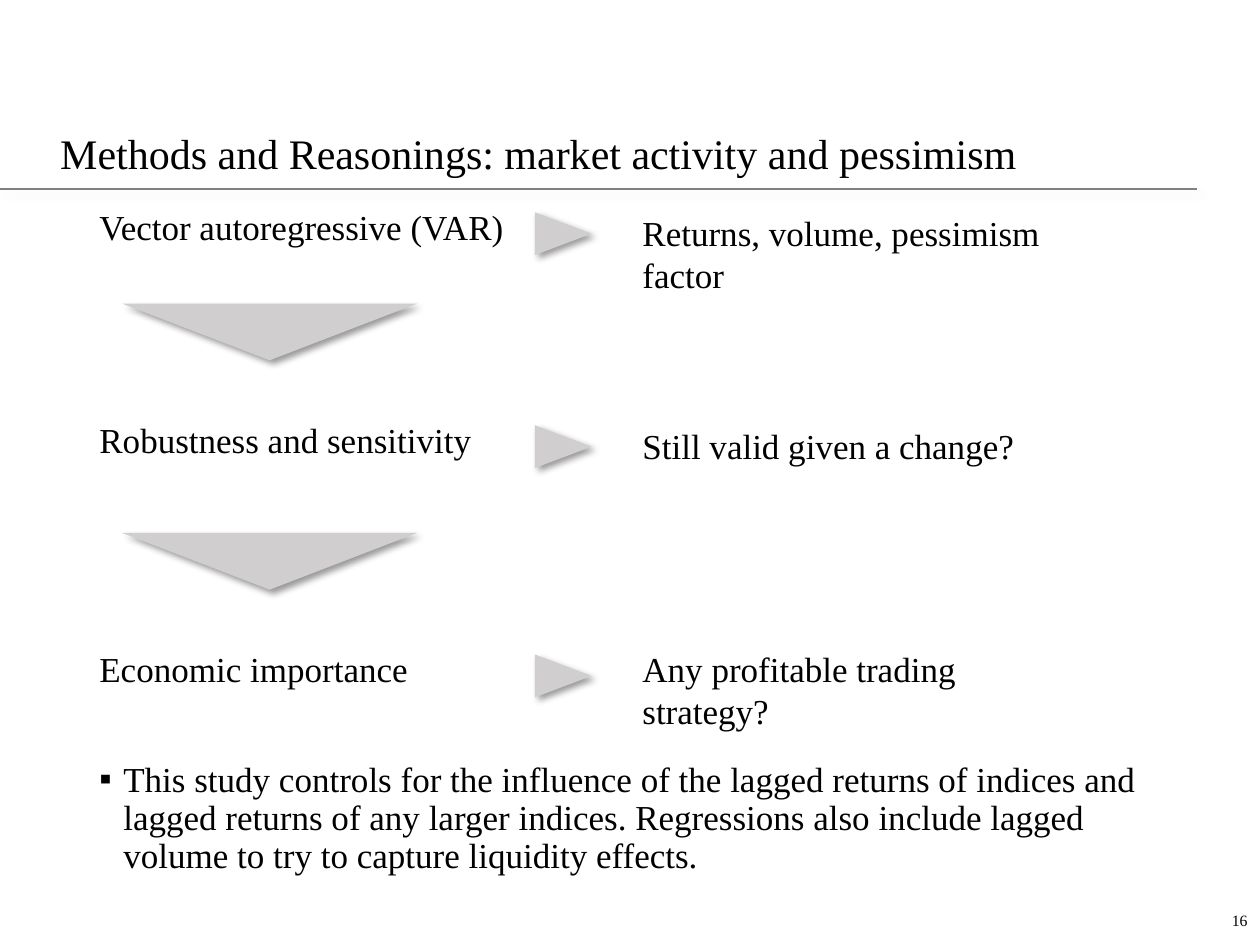
from dataclasses import dataclass

from lxml.etree import SubElement
from pptx import Presentation
from pptx.dml.color import RGBColor
from pptx.enum.shapes import MSO_CONNECTOR as Connector, MSO_SHAPE as Shape
from pptx.enum.text import MSO_ANCHOR as Anchor, PP_ALIGN as Align
from pptx.oxml.ns import qn
from pptx.util import Inches, Pt

COLORS = {"text": "000000", "arrow": "D0CECE", "rule": "808080", "shadow": "000000"}
FONT = "Times New Roman"
WIDTH, HEIGHT = 10, 7.5

# Grid, in inches: left edges of the columns and tops of the rows
STEP_COLUMN, DOWN_COLUMN, RIGHT_COLUMN, RESULT_COLUMN = 0.69, 0.97, 4.3, 5
ROWS = (1.58, 3.27, 5.09)
LABEL_WIDTH, LABEL_HEIGHT = 3.72, 0.44
ARROW_OFFSET, DOWN_LEAD = 0.05, 0.86
BULLET_INDENT = 0.19


@dataclass(frozen=True)
class Box:
    left: float
    top: float
    width: float
    height: float

    def emu(self) -> tuple:
        return tuple(Inches(n) for n in (self.left, self.top, self.width, self.height))


@dataclass(frozen=True)
class Step:
    method: str
    result: str
    result_offset: float
    result_height: float = LABEL_HEIGHT


STEPS = (
    Step("Vector autoregressive (VAR)", "Returns, volume, pessimism factor", 0.05, 0.77),
    Step("Robustness and sensitivity", "Still valid given a change?", 0.05),
    Step("Economic importance", "Any profitable trading strategy?", 0),
)
CONTROLS = (
    "This study controls for the influence of the lagged returns of indices and "
    "lagged returns of any larger indices. Regressions also include lagged volume "
    "to try to capture liquidity effects."
)


def color(name: str) -> RGBColor:
    return RGBColor.from_string(COLORS[name])


def add_shadow(shape) -> None:
    """Soft shadow falling to the lower right, whatever the shape's rotation."""
    effects = SubElement(shape._element.spPr, qn("a:effectLst"))
    shadow = SubElement(
        effects, qn("a:outerShdw"), blurRad=str(Pt(4)), dist=str(Pt(3)),
        dir=str(45 * 60000), algn="tl", rotWithShape="0",
    )
    tint = SubElement(shadow, qn("a:srgbClr"), val=COLORS["shadow"])
    SubElement(tint, qn("a:alpha"), val="40000")


def add_text(slide, box: Box, text: str, size: float = 20, anchor=Anchor.TOP,
             align=Align.LEFT, spacing: float = 1.0, bullet: str = "") -> None:
    frame = slide.shapes.add_textbox(*box.emu()).text_frame
    frame.word_wrap = True
    frame.vertical_anchor = anchor
    paragraph = frame.paragraphs[0]
    paragraph.alignment = align
    paragraph.line_spacing = spacing
    if bullet:
        properties = paragraph._p.get_or_add_pPr()
        properties.set("marL", str(Inches(BULLET_INDENT)))
        properties.set("indent", str(-Inches(BULLET_INDENT)))
        SubElement(properties, qn("a:buFont"), typeface=FONT)
        SubElement(properties, qn("a:buChar"), char=bullet)
    run = paragraph.add_run()
    run.text = text
    run.font.name = FONT
    run.font.size = Pt(size)
    run.font.color.rgb = color("text")


def add_arrow(slide, box: Box, rotation: int) -> None:
    arrow = slide.shapes.add_shape(Shape.ISOSCELES_TRIANGLE, *box.emu())
    arrow.rotation = rotation
    arrow.fill.solid()
    arrow.fill.fore_color.rgb = color("arrow")
    arrow.line.fill.background()
    add_shadow(arrow)


def add_title_rule(slide) -> None:
    y = Inches(HEIGHT / 5)
    rule = slide.shapes.add_connector(
        Connector.STRAIGHT, 0, y, Inches(WIDTH * 0.95), y)
    rule.line.color.rgb = color("rule")
    rule.line.width = Pt(1)
    add_shadow(rule)


def add_step(slide, step: Step, top: float) -> None:
    add_text(slide, Box(STEP_COLUMN, top, LABEL_WIDTH, LABEL_HEIGHT), step.method)
    add_arrow(slide, Box(RIGHT_COLUMN, top + ARROW_OFFSET, 0.34, 0.45), 90)
    add_text(slide, Box(RESULT_COLUMN, top + step.result_offset,
                        LABEL_WIDTH, step.result_height), step.result)


def main() -> None:
    presentation = Presentation()
    presentation.slide_width, presentation.slide_height = Inches(WIDTH), Inches(HEIGHT)
    slide = presentation.slides.add_slide(presentation.slide_layouts[6])

    add_title_rule(slide)
    add_text(slide, Box(0.38, 0.37, 8.94, 1.1),
             "Methods and Reasonings: market activity and pessimism",
             size=24, anchor=Anchor.BOTTOM, spacing=0.9)
    for step, top in zip(STEPS, ROWS):
        add_step(slide, step, top)
    for next_top in ROWS[1:]:
        add_arrow(slide, Box(DOWN_COLUMN, next_top - DOWN_LEAD, 2.34, 0.45), 180)
    add_text(slide, Box(STEP_COLUMN, 6, 8.62, 1.38), CONTROLS, spacing=0.9, bullet="▪")
    add_text(slide, Box(7.75, 7.1, 2.25, 0.4), "16",
             size=9, anchor=Anchor.MIDDLE, align=Align.RIGHT)

    presentation.save("out.pptx")


if __name__ == "__main__":
    main()
